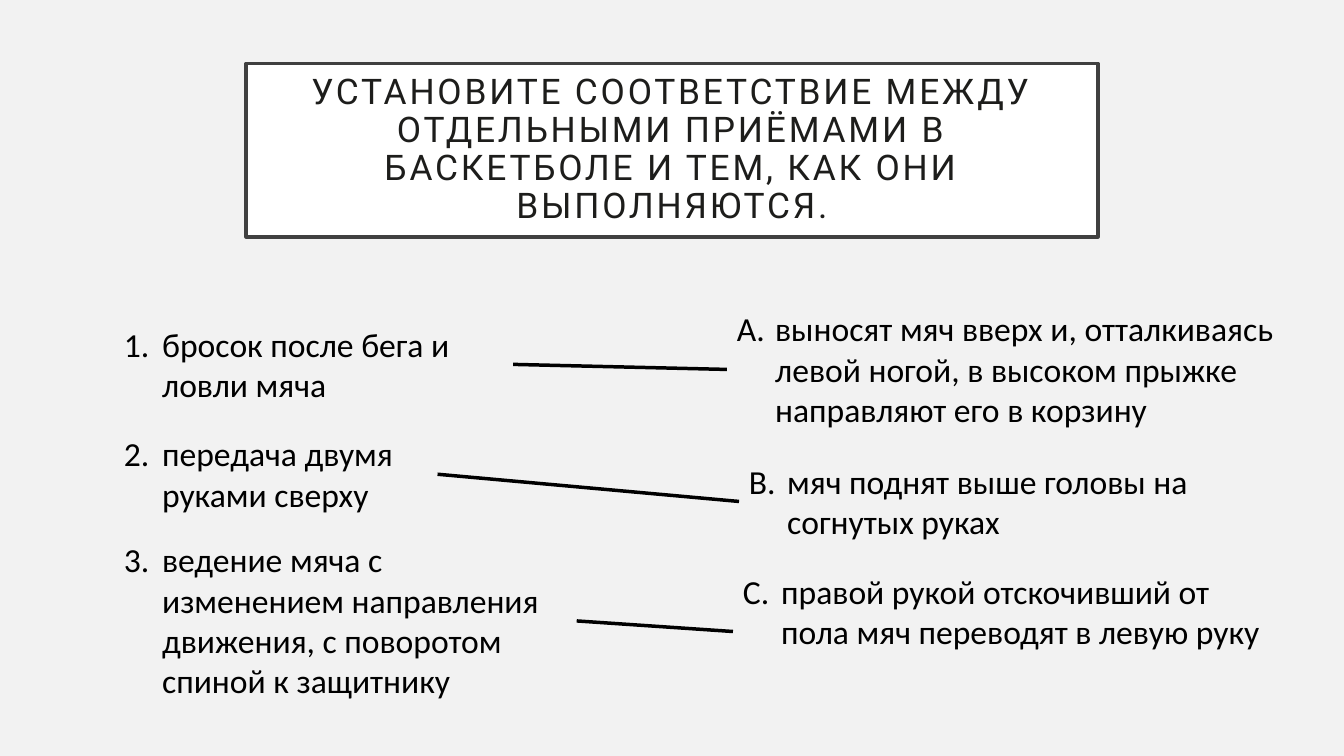
from dataclasses import dataclass

from lxml import etree
from pptx import Presentation
from pptx import util as u
from pptx.dml.color import RGBColor
from pptx.enum import shapes, text
from pptx.oxml.ns import qn

HUES = {"back": "F2F2F2", "white": "FFFFFF", "frame": "404040",
        "title": "1D1D1B", "black": "000000"}
INDENT = u.Inches(0.38)


@dataclass
class Item:
    words: str
    left: float
    top: float
    width: float
    height: float


@dataclass
class Pair:
    move: Item
    method: Item


PAIRS = [
    Pair(Item("бросок после бега и ловли мяча", 1.13, 3.16, 3.96, 0.91),
         Item("выносят мяч вверх и, отталкиваясь левой ногой, в высоком прыжке "
              "направляют его в корзину", 7.21, 3.01, 5.61, 1.31)),
    Pair(Item("передача двумя руками сверху", 1.13, 4.25, 3.21, 0.91),
         Item("мяч поднят выше головы на согнутых руках", 7.33, 4.52, 5.1, 0.91)),
    Pair(Item("ведение мяча с изменением направления движения, с поворотом "
              "спиной к защитнику", 1.13, 5.3, 4.59, 1.72),
         Item("правой рукой отскочивший от пола мяч переводят в левую руку",
              7.27, 5.61, 5.36, 1.31)),
]


def hue(name: str) -> RGBColor:
    return RGBColor.from_string(HUES[name])


def write(box, words: str, *, font: str, size: float, color: str,
          align=text.PP_ALIGN.LEFT, gap: float = 1.0, track: int = 0,
          style: str = "", start: int = 1) -> None:
    """Fill a box with one paragraph, numbered when a style is given."""
    box.text_frame.word_wrap = True
    para = box.text_frame.paragraphs[0]
    para.alignment, para.line_spacing = align, gap
    if style:
        props = para._p.get_or_add_pPr()
        props.set("marL", str(INDENT))
        props.set("indent", str(-INDENT))
        mark = etree.SubElement(props, qn("a:buAutoNum"), type=style)
        if start > 1:
            mark.set("startAt", str(start))
    run = para.add_run()
    run.text = words
    run.font.name, run.font.size = font, u.Pt(size)
    run.font.color.rgb = hue(color)
    if track:
        run._r.get_or_add_rPr().set("spc", str(track * 100))


def add_item(slide, item: Item, style: str, start: int):
    box = slide.shapes.add_textbox(*map(
        u.Inches, (item.left, item.top, item.width, item.height)))
    write(box, item.words, font="Calibri", size=24, color="black",
          style=style, start=start)
    box.text_frame.auto_size = text.MSO_AUTO_SIZE.SHAPE_TO_FIT_TEXT
    return box


def join(slide, left, right) -> None:
    """Link the right side of one box to the left side of another."""
    link = slide.shapes.add_connector(shapes.MSO_CONNECTOR.STRAIGHT, 0, 0, 0, 0)
    link.begin_connect(left, 3)
    link.end_connect(right, 1)
    link.line.color.rgb, link.line.width = hue("black"), u.Pt(2.5)
    etree.SubElement(link._element.spPr, qn("a:effectLst"))


def add_title(slide) -> None:
    title = slide.shapes.title
    title.left, title.top = u.Inches(2.44), u.Inches(0.63)
    title.width, title.height = u.Inches(8.45), u.Inches(1.72)
    title.fill.solid()
    title.fill.fore_color.rgb = hue("white")
    title.line.color.rgb, title.line.width = hue("frame"), u.Pt(2.5)
    frame = title.text_frame
    frame.auto_size = text.MSO_AUTO_SIZE.NONE
    frame.vertical_anchor = text.MSO_ANCHOR.MIDDLE
    frame.margin_left = frame.margin_right = u.Inches(0.2)
    frame.margin_top = frame.margin_bottom = u.Inches(0.2)
    write(title, "УСТАНОВИТЕ СООТВЕТСТВИЕ МЕЖДУ ОТДЕЛЬНЫМИ ПРИЁМАМИ В "
          "БАСКЕТБОЛЕ И ТЕМ, КАК ОНИ ВЫПОЛНЯЮТСЯ.", font="Roboto", size=25.2,
          color="title", align=text.PP_ALIGN.CENTER, gap=0.9, track=2)


def main() -> None:
    deck = Presentation()
    deck.slide_width, deck.slide_height = u.Inches(13.33), u.Inches(7.5)
    slide = deck.slides.add_slide(deck.slide_layouts[5])
    slide.background.fill.solid()
    slide.background.fill.fore_color.rgb = hue("back")

    # Framed title
    add_title(slide)

    # Moves on the left, methods on the right, joined in pairs
    for num, pair in enumerate(PAIRS, 1):
        move = add_item(slide, pair.move, "arabicPeriod", num)
        method = add_item(slide, pair.method, "alphaUcPeriod", num)
        join(slide, move, method)

    deck.save("out.pptx")


if __name__ == "__main__":
    main()
